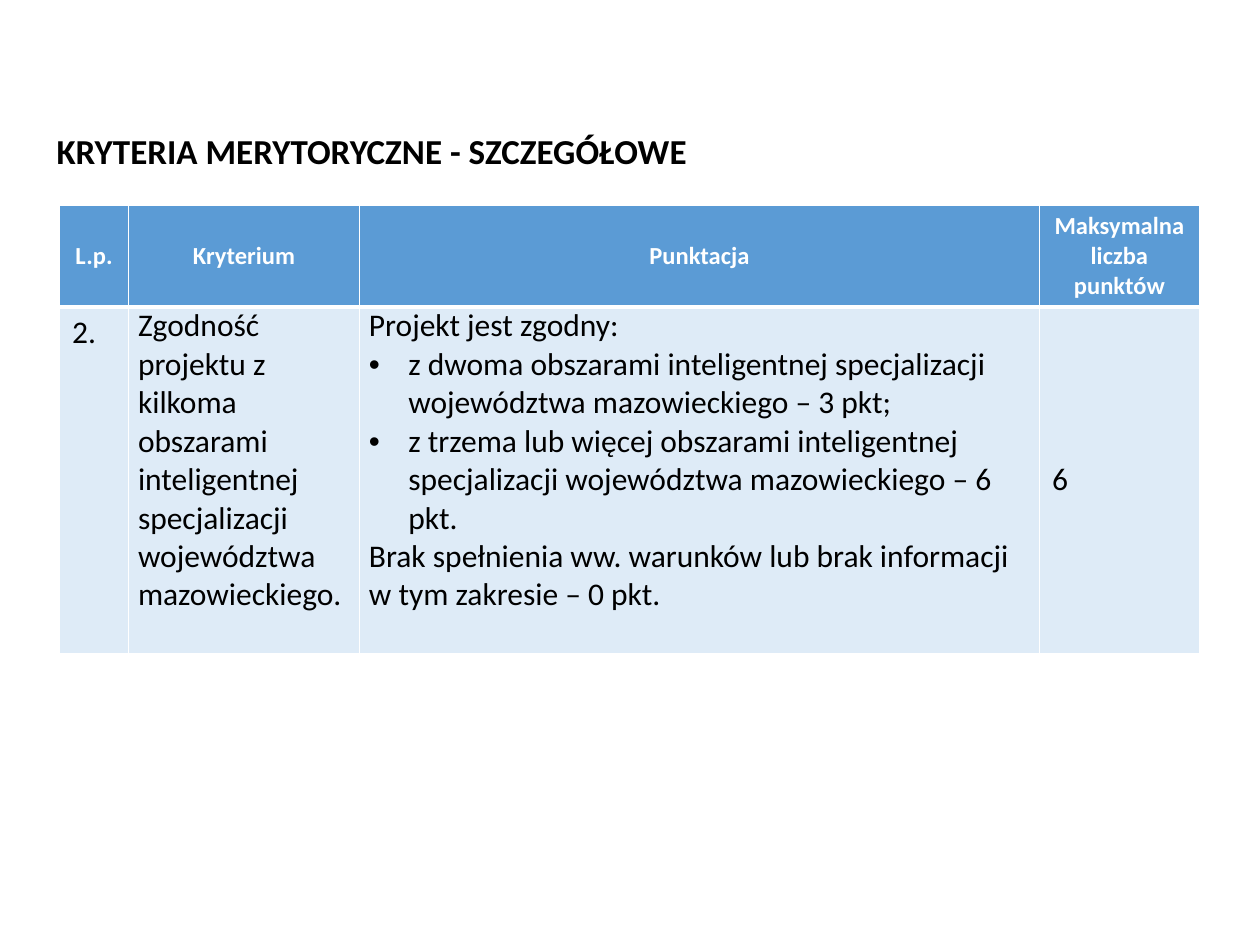
from dataclasses import dataclass

from lxml.etree import SubElement
from pptx import Presentation
from pptx.dml.color import RGBColor
from pptx.enum.text import MSO_ANCHOR as ANCHOR, MSO_AUTO_SIZE as AUTO, PP_ALIGN as ALIGN
from pptx.oxml.ns import qn
from pptx.util import Pt


@dataclass(frozen=True)
class Theme:
    font: str = "Calibri"
    title_size: int = 20
    head_size: int = 14
    body_size: int = 18
    ink: str = "000000"
    white: str = "FFFFFF"
    head_fill: str = "5B9BD5"
    body_fill: str = "DEEBF7"
    indent: float = 22.5
    rule: int = 1
    head_rule: int = 3


def write(p, text, *, font, size, color, bold=False, align=None, bullet=None, indent=0):
    """Fill one paragraph with formatted text and an optional bullet."""
    if bullet:
        pPr = p._p.get_or_add_pPr()
        pPr.set("marL", str(Pt(indent)))
        pPr.set("indent", str(-Pt(indent)))
        SubElement(pPr, qn("a:buFont")).set("typeface", "Arial")
        SubElement(pPr, qn("a:buChar")).set("char", bullet)
    if align is not None:
        p.alignment = align
    r = p.add_run()
    r.text = text
    r.font.name, r.font.size, r.font.bold = font, Pt(size), bold
    r.font.color.rgb = RGBColor.from_string(color)


class Deck:
    def __init__(self, theme, width, height):
        self.theme = theme
        self.prs = Presentation()
        self.prs.slide_width, self.prs.slide_height = Pt(width), Pt(height)
        self.s = self.prs.slides.add_slide(self.prs.slide_layouts[6])

    def title(self, text, x, y, w, h):
        t = self.theme
        tf = self.s.shapes.add_textbox(Pt(x), Pt(y), Pt(w), Pt(h)).text_frame
        tf.word_wrap = True
        tf.auto_size = AUTO.SHAPE_TO_FIT_TEXT
        tf.vertical_anchor = ANCHOR.MIDDLE
        write(tf.paragraphs[0], text, font=t.font, size=t.title_size, color=t.ink, bold=True)

    def table(self, x, y, widths, heights):
        sp = self.s.shapes.add_table(len(heights), len(widths), Pt(x), Pt(y),
                                     Pt(sum(widths)), Pt(sum(heights)))
        for col, w in zip(sp.table.columns, widths):
            col.width = Pt(w)
        for row, h in zip(sp.table.rows, heights):
            row.height = Pt(h)
        return sp.table

    def borders(self, cell, **widths):
        tcPr = cell._tc.get_or_add_tcPr()
        for side in "LRTB":
            ln = SubElement(tcPr, qn(f"a:ln{side}"), w=str(Pt(widths.get(side, self.theme.rule))))
            fill = SubElement(ln, qn("a:solidFill"))
            SubElement(fill, qn("a:srgbClr")).set("val", self.theme.white)

    def fill(self, cell, color):
        cell.fill.solid()
        cell.fill.fore_color.rgb = RGBColor.from_string(color)

    def head_cell(self, cell, text):
        t = self.theme
        self.borders(cell, B=t.head_rule)
        self.fill(cell, t.head_fill)
        cell.vertical_anchor = ANCHOR.MIDDLE
        write(cell.text_frame.paragraphs[0], text, font=t.font, size=t.head_size,
              color=t.white, bold=True, align=ALIGN.CENTER)

    def body_cell(self, cell, lines, anchor=ANCHOR.TOP, tight=False):
        t = self.theme
        self.borders(cell, T=t.head_rule)
        self.fill(cell, t.body_fill)
        cell.vertical_anchor = anchor
        if tight:
            cell.margin_left = cell.margin_right = Pt(5.4)
            cell.margin_top = cell.margin_bottom = 0
        tf = cell.text_frame
        for i, (text, bullet) in enumerate(lines):
            p = tf.add_paragraph() if i else tf.paragraphs[0]
            write(p, text, font=t.font, size=t.body_size, color=t.ink,
                  bullet=bullet, indent=t.indent)


def main():
    deck = Deck(Theme(), 720, 540)

    # Criteria table
    table = deck.table(34, 117, widths=[39.5, 132, 388.5, 91.5], heights=[57, 198])
    for i, text in enumerate(["L.p.", "Kryterium", "Punktacja", "Maksymalna liczba punktów"]):
        deck.head_cell(table.cell(0, i), text)

    # Criterion row: number, name, scoring, maximum
    number, name, scoring, maximum = (table.cell(1, i) for i in range(4))
    deck.body_cell(number, [("2.", None)])
    deck.body_cell(name, [("Zgodność projektu z kilkoma obszarami inteligentnej "
                           "specjalizacji województwa mazowieckiego.", None)], tight=True)
    deck.body_cell(scoring, [
        ("Projekt jest zgodny:", None),
        ("z dwoma obszarami inteligentnej specjalizacji województwa mazowieckiego – 3 pkt;", "•"),
        ("z trzema lub więcej obszarami inteligentnej specjalizacji "
         "województwa mazowieckiego – 6 pkt.", "•"),
        ("Brak spełnienia ww. warunków lub brak informacji w tym zakresie – 0 pkt.", None),
    ], tight=True)
    deck.body_cell(maximum, [("6", None)], anchor=ANCHOR.MIDDLE)

    # Heading
    deck.title("KRYTERIA MERYTORYCZNE - SZCZEGÓŁOWE", 25.2, 70.5, 434, 31.5)

    deck.prs.save("out.pptx")


if __name__ == "__main__":
    main()
